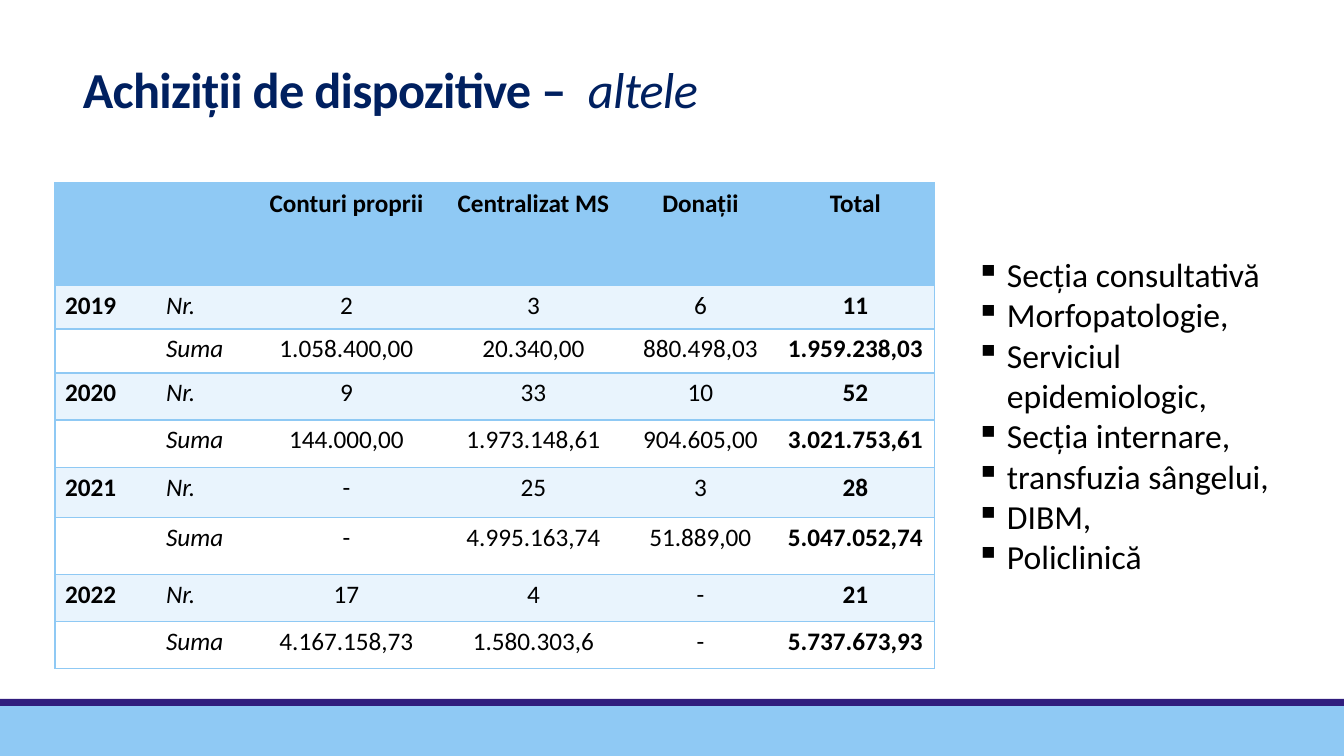
from lxml.etree import SubElement
from pptx import Presentation
from pptx.dml.color import RGBColor
from pptx.enum.shapes import MSO_SHAPE
from pptx.enum.text import MSO_ANCHOR, PP_ALIGN
from pptx.oxml.ns import qn
from pptx.util import Emu, Pt

SKY = RGBColor(0x8F, 0xC9, 0xF4)
PALE = RGBColor(0xE9, 0xF4, 0xFD)
PURPLE = RGBColor(0x30, 0x1D, 0x7D)
NAVY = RGBColor(0x00, 0x20, 0x60)
BLACK = RGBColor(0x00, 0x00, 0x00)
FONT = "Calibri"


def px(length):
    return Emu(round(length * 914400 / 100.8))


def style(font, size, color, bold=False, italic=False):
    font.name = FONT
    font.size = Pt(size)
    font.color.rgb = color
    font.bold = bold
    font.italic = italic


presentation = Presentation()
presentation.slide_width = px(1344)
presentation.slide_height = px(756)
slide = presentation.slides.add_slide(presentation.slide_layouts[6])

for top, height, color in [(706, 50, SKY), (699, 7, PURPLE)]:
    band = slide.shapes.add_shape(MSO_SHAPE.RECTANGLE, 0, px(top), px(1344), px(height))
    band.shadow.inherit = False
    band.fill.solid()
    band.fill.fore_color.rgb = color
    band.line.fill.background()

title = slide.shapes.add_textbox(px(73), px(74), px(1109), px(50))
title.text_frame.word_wrap = True
title.text_frame.vertical_anchor = MSO_ANCHOR.BOTTOM
paragraph = title.text_frame.paragraphs[0]
paragraph.line_spacing = 0.85
for text, emphasis in [("Achiziții de dispozitive –  ", False), ("altele", True)]:
    run = paragraph.add_run()
    run.text = text
    style(run.font, 36, NAVY, bold=not emphasis, italic=emphasis)
    run._r.get_or_add_rPr().set("spc", "-50")

rows = [
    ["", "", "Conturi proprii", "Centralizat MS", "Donații", "Total"],
    ["2019", "Nr.", "2", "3", "6", "11"],
    ["", "Suma", "1.058.400,00", "20.340,00", "880.498,03", "1.959.238,03"],
    ["2020", "Nr.", "9", "33", "10", "52"],
    ["", "Suma", "144.000,00", "1.973.148,61", "904.605,00", "3.021.753,61"],
    ["2021", "Nr.", "-", "25", "3", "28"],
    ["", "Suma", "-", "4.995.163,74", "51.889,00", "5.047.052,74"],
    ["2022", "Nr.", "17", "4", "-", "21"],
    ["", "Suma", "4.167.158,73", "1.580.303,6", "-", "5.737.673,93"],
]
column_widths = [101, 95, 191, 183, 151, 159]
row_heights = [102, 44, 44, 47, 48, 50, 57, 47, 47]
last_column = len(column_widths) - 1

table = slide.shapes.add_table(
    len(rows), len(column_widths), px(55), px(183),
    px(sum(column_widths)), px(sum(row_heights))).table
table.first_row = False
table.horz_banding = False
for column, width in zip(table.columns, column_widths):
    column.width = px(width)
for row, height in zip(table.rows, row_heights):
    row.height = px(height)

for row_index, values in enumerate(rows):
    for column_index, value in enumerate(values):
        cell = table.cell(row_index, column_index)
        cell.text = value
        paragraph = cell.text_frame.paragraphs[0]
        paragraph.alignment = PP_ALIGN.CENTER if column_index > 1 else PP_ALIGN.LEFT
        style(paragraph.font, 18, BLACK,
              bold=row_index == 0 or column_index in (0, last_column),
              italic=column_index == 1)

        properties = cell._tc.get_or_add_tcPr()
        edges = {"lnL": column_index == 0, "lnR": column_index == last_column,
                 "lnT": True, "lnB": True}
        for edge, visible in edges.items():
            line = SubElement(properties, qn(f"a:{edge}"), w=str(Pt(1)))
            if visible:
                fill = SubElement(line, qn("a:solidFill"))
                SubElement(fill, qn("a:srgbClr"), val=str(SKY))
            else:
                SubElement(line, qn("a:noFill"))

        if row_index == 0 or row_index % 2:
            cell.fill.solid()
            cell.fill.fore_color.rgb = PALE if row_index else SKY
        else:
            cell.fill.background()

departments = [
    "Secția consultativă", "Morfopatologie,", "Serviciul epidemiologic,",
    "Secția internare,", "transfuzia sângelui,", "DIBM,", "Policlinică",
]
department_list = slide.shapes.add_textbox(px(966), px(249), px(350), px(336))
text_frame = department_list.text_frame
text_frame.word_wrap = True
text_frame.text = "\n".join(departments)
for paragraph in text_frame.paragraphs:
    style(paragraph.font, 24, BLACK)
    properties = paragraph._p.get_or_add_pPr()
    properties.set("marL", str(px(31)))
    properties.set("indent", str(-px(31)))
    bullet = properties.makeelement(qn("a:buChar"), {"char": "▪"})
    properties.insert(0, bullet)

presentation.save("out.pptx")
